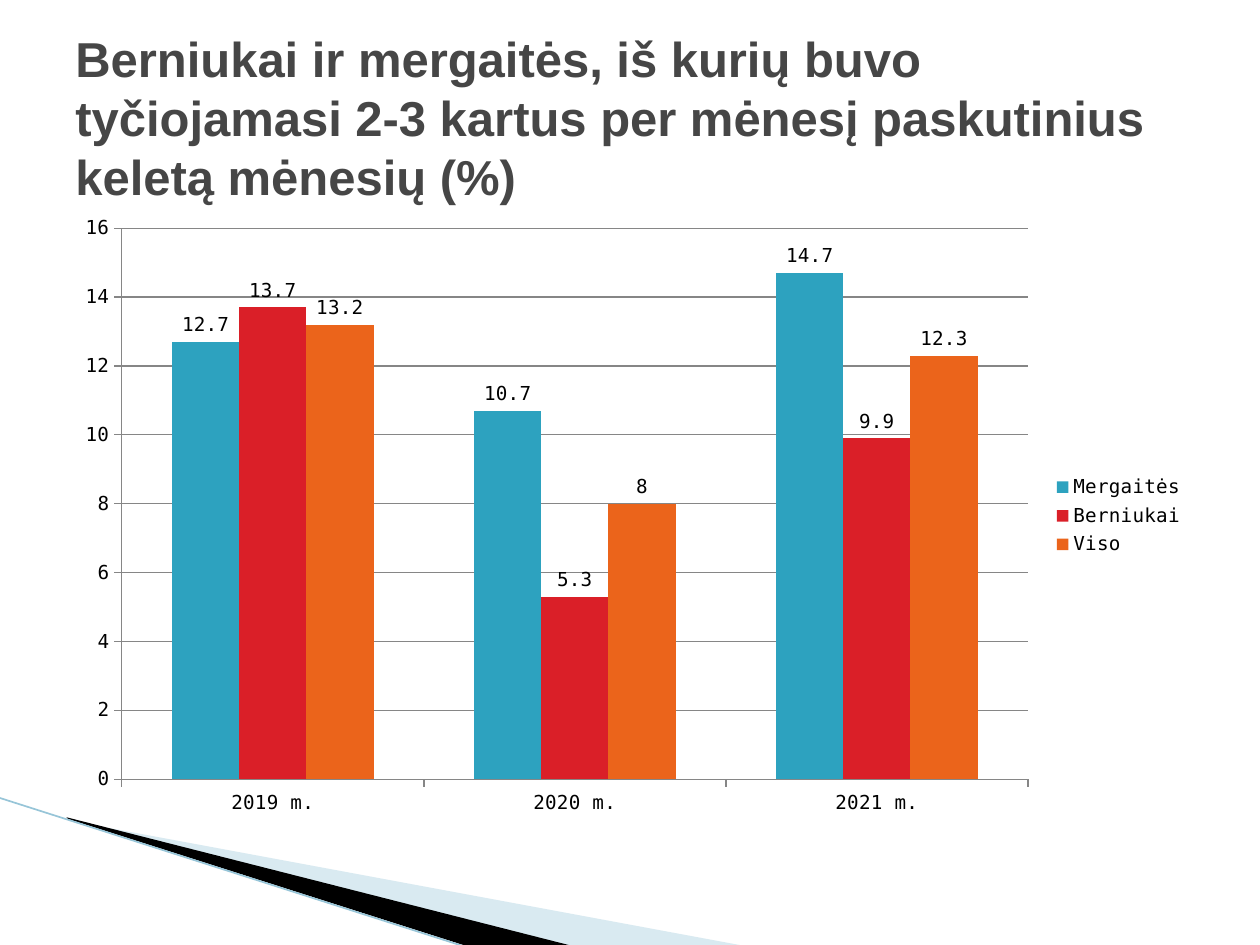
from dataclasses import dataclass

from lxml import etree
from pptx import Presentation
from pptx.chart.data import CategoryChartData
from pptx.dml.color import RGBColor
from pptx.enum.chart import XL_CHART_TYPE, XL_LABEL_POSITION, XL_LEGEND_POSITION, XL_TICK_MARK
from pptx.enum.shapes import MSO_CONNECTOR
from pptx.enum.text import MSO_ANCHOR
from pptx.oxml.ns import qn
from pptx.util import Pt

COLUMNS = XL_CHART_TYPE.COLUMN_CLUSTERED
OUTSIDE_END = XL_LABEL_POSITION.OUTSIDE_END
LEGEND_RIGHT = XL_LEGEND_POSITION.RIGHT
TICK_OUT = XL_TICK_MARK.OUTSIDE
STRAIGHT = MSO_CONNECTOR.STRAIGHT
MIDDLE = MSO_ANCHOR.MIDDLE

TITLE_FONT = "Arial"
CHART_FONT = "DejaVu Sans Mono"
AXIS_GREY = "868686"
YEARS = ["2019 m.", "2020 m.", "2021 m."]


@dataclass
class Wedge:
    points: list[tuple[float, float]]
    color: str
    opacity: int = 100


@dataclass
class Series:
    name: str
    values: list[float]
    color: str


WEDGES = [
    Wedge([(39.6, 468.7), (428.4, 540.7), (328.3, 540.7), (39.6, 468)], "A0CBDC", 40),
    Wedge([(38.2, 467.3), (329, 540.7), (267.8, 541.4), (38.9, 468)], "000000"),
]
SERIES = [
    Series("Mergaitės", [12.7, 10.7, 14.7], "2DA2BF"),
    Series("Berniukai", [13.7, 5.3, 9.9], "DA1F28"),
    Series("Viso", [13.2, 8, 12.3], "EB641B"),
]


def rgb(value: str) -> RGBColor:
    return RGBColor.from_string(value)


def set_font(font, name: str, size: float, color: str) -> None:
    font.name = name
    font.size = Pt(size)
    font.color.rgb = rgb(color)


def add_wedge(s, wedge: Wedge) -> None:
    first, *rest = wedge.points
    builder = s.shapes.build_freeform(*first, scale=Pt(1))
    builder.add_line_segments(rest, close=True)
    sp = builder.convert_to_shape()
    sp.shadow.inherit = False
    sp.fill.solid()
    sp.fill.fore_color.rgb = rgb(wedge.color)
    sp.line.fill.background()
    if wedge.opacity < 100:
        clr = sp.fill._xPr.find(".//" + qn("a:srgbClr"))
        etree.SubElement(clr, qn("a:alpha")).set("val", str(wedge.opacity * 1000))


def add_edge(s) -> None:
    cxn = s.shapes.add_connector(STRAIGHT, Pt(-0.7), Pt(455.8), Pt(267.1), Pt(541.4))
    cxn.line.color.rgb = rgb("97C5D8")
    cxn.line.width = Pt(0.95)
    etree.SubElement(cxn._element.spPr, qn("a:effectLst"))


def add_title(s, text: str) -> None:
    sp = s.shapes.add_textbox(Pt(36), Pt(21.6), Pt(648), Pt(90))
    tf = sp.text_frame
    tf.word_wrap = True
    tf.vertical_anchor = MIDDLE
    r = tf.paragraphs[0].add_run()
    r.text = text
    r.font.bold = True
    set_font(r.font, TITLE_FONT, 28, "464646")


def style_axis(axis) -> None:
    axis.major_tick_mark = TICK_OUT
    axis.format.line.color.rgb = rgb(AXIS_GREY)
    axis.format.line.width = Pt(0.75)
    set_font(axis.tick_labels.font, CHART_FONT, 11, "000000")


def add_bullying_chart(s) -> None:
    data = CategoryChartData()
    data.categories = YEARS
    for item in SERIES:
        data.add_series(item.name, item.values)
    frame = s.shapes.add_chart(COLUMNS, Pt(36), Pt(116.6), Pt(648), Pt(356.4), data)
    chart = frame.chart
    set_font(chart.font, CHART_FONT, 18, "000000")
    chart.has_title = False
    chart.has_legend = True
    chart.legend.position = LEGEND_RIGHT
    chart.legend.include_in_layout = False
    set_font(chart.legend.font, CHART_FONT, 11, "000000")

    style_axis(chart.category_axis)
    style_axis(chart.value_axis)
    chart.value_axis.minimum_scale = 0
    chart.value_axis.maximum_scale = 16
    chart.value_axis.major_unit = 2
    grid = chart.value_axis.major_gridlines.format.line
    grid.color.rgb = rgb(AXIS_GREY)
    grid.width = Pt(0.75)

    plot = chart.plots[0]
    plot.gap_width = 150
    plot.vary_by_categories = False
    for series, item in zip(plot.series, SERIES):
        series.format.fill.solid()
        series.format.fill.fore_color.rgb = rgb(item.color)
        labels = series.data_labels
        labels.show_value = True
        labels.position = OUTSIDE_END
        set_font(labels.font, CHART_FONT, 11, "000000")


def main() -> None:
    prs = Presentation()
    prs.slide_width = Pt(720)
    prs.slide_height = Pt(540)
    s = prs.slides.add_slide(prs.slide_layouts[6])
    for wedge in WEDGES:
        add_wedge(s, wedge)
    add_edge(s)
    add_title(s, "Berniukai ir mergaitės, iš kurių buvo tyčiojamasi 2-3 kartus "
                 "per mėnesį paskutinius keletą mėnesių (%)")
    add_bullying_chart(s)
    prs.save("out.pptx")


if __name__ == "__main__":
    main()
